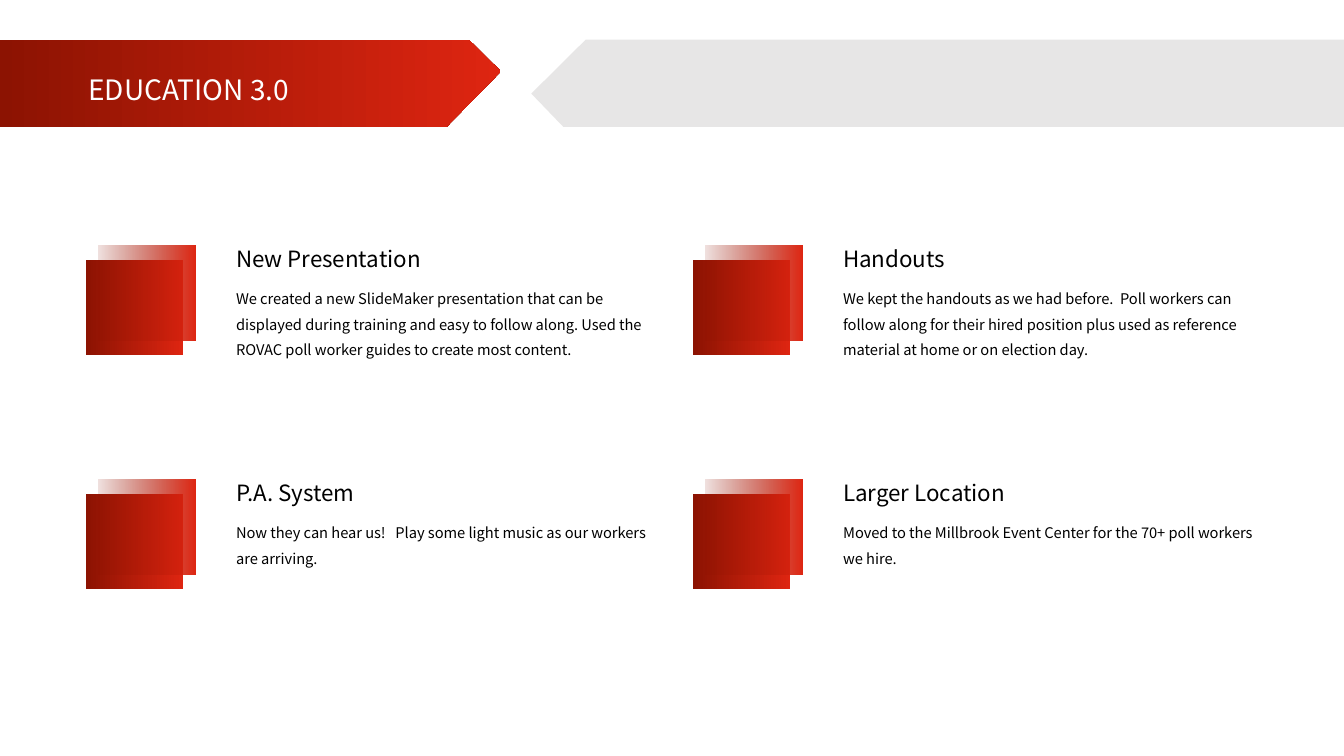
from lxml import etree
from pptx import Presentation
from pptx.dml.color import RGBColor
from pptx.enum.shapes import MSO_SHAPE
from pptx.enum.text import MSO_AUTO_SIZE
from pptx.oxml.ns import qn
from pptx.util import Cm, Pt

RECTANGLE = MSO_SHAPE.RECTANGLE
GROW = MSO_AUTO_SIZE.SHAPE_TO_FIT_TEXT
DARK_RED, BRIGHT_RED, GREY = "8C1302", "DE2511", "E7E6E6"
WHITE, BLACK = "FFFFFF", "000000"


def paint(shape, *colors, start_opacity=100):
    shape.shadow.inherit = False
    shape.line.fill.background()
    if len(colors) == 1:
        shape.fill.solid()
        shape.fill.fore_color.rgb = RGBColor.from_string(colors[0])
        return
    shape.fill.gradient()
    shape.fill.gradient_angle = 0
    for stop, color in zip(shape.fill.gradient_stops, colors):
        stop.color.rgb = RGBColor.from_string(color)
    if start_opacity < 100:
        first_color = shape._element.spPr.find(".//" + qn("a:srgbClr"))
        etree.SubElement(first_color, qn("a:alpha"), val=str(start_opacity * 1000))


def write(text, left, top, width, height, size, color, spacing=None):
    box = slide.shapes.add_textbox(Cm(left), Cm(top), Cm(width), Cm(height))
    frame = box.text_frame
    frame.word_wrap = True
    frame.auto_size = GROW
    paragraph = frame.paragraphs[0]
    paragraph.line_spacing = spacing
    run = paragraph.add_run()
    run.text = text
    run.font.color.rgb = RGBColor.from_string(color)
    for attribute, value in {"name": "Noto Sans CJK SC", "size": Pt(size)}.items():
        setattr(run.font, attribute, value)


prs = Presentation()
prs.slide_width, prs.slide_height = Cm(33.87), Cm(19.05)
slide = prs.slides.add_slide(prs.slide_layouts[6])

banners = [
    ([(0, 1), (11.81, 1), (12.62, 1.8), (11.25, 3.2), (0, 3.2)], [DARK_RED, BRIGHT_RED]),
    ([(14.76, 1), (33.87, 1), (33.87, 3.2), (14.2, 3.2), (13.39, 2.36)], [GREY]),
]
for outline, colors in banners:
    points = [(Cm(x), Cm(y)) for x, y in outline]
    builder = slide.shapes.build_freeform(*points[0])
    builder.add_line_segments(points[1:])
    paint(builder.convert_to_shape(), *colors)

write("EDUCATION 3.0", 1.98, 1.45, 10.64, 1.37, 20, WHITE, 1.3)

improvements = [
    ("New Presentation", 6.93, 2.21,
     "We created a new SlideMaker presentation that can be displayed during training "
     "and easy to follow along. Used the ROVAC poll worker guides to create most content."),
    ("Handouts", 4.24, 2.21,
     "We kept the handouts as we had before.  Poll workers can follow along for their "
     "hired position plus used as reference material at home or on election day."),
    ("P.A. System", 4.24, 1.55,
     "Now they can hear us!   Play some light music as our workers are arriving."),
    ("Larger Location", 5.64, 1.55,
     "Moved to the Millbrook Event Center for the 70+ poll workers we hire."),
]
COLUMN_STEP, ROW_STEP = 15.3, 5.89
for index, (heading, heading_width, detail_height, detail) in enumerate(improvements):
    row, column = divmod(index, 2)
    left, top = 2.17 + column * COLUMN_STEP, 6.05 + row * ROW_STEP
    for dx, dy, opacity in [(0, 0.5, 100), (0.31, 0.14, 13)]:
        square = slide.shapes.add_shape(
            RECTANGLE, Cm(left + dx), Cm(top + dy), Cm(2.45), Cm(2.4))
        paint(square, DARK_RED, BRIGHT_RED, start_opacity=opacity)
    write(heading, left + 3.53, top, heading_width, 0.94, 16, BLACK)
    write(detail, left + 3.53, top + 0.94, 11.07, detail_height, 10.5, BLACK, 1.45)

prs.save("out.pptx")
